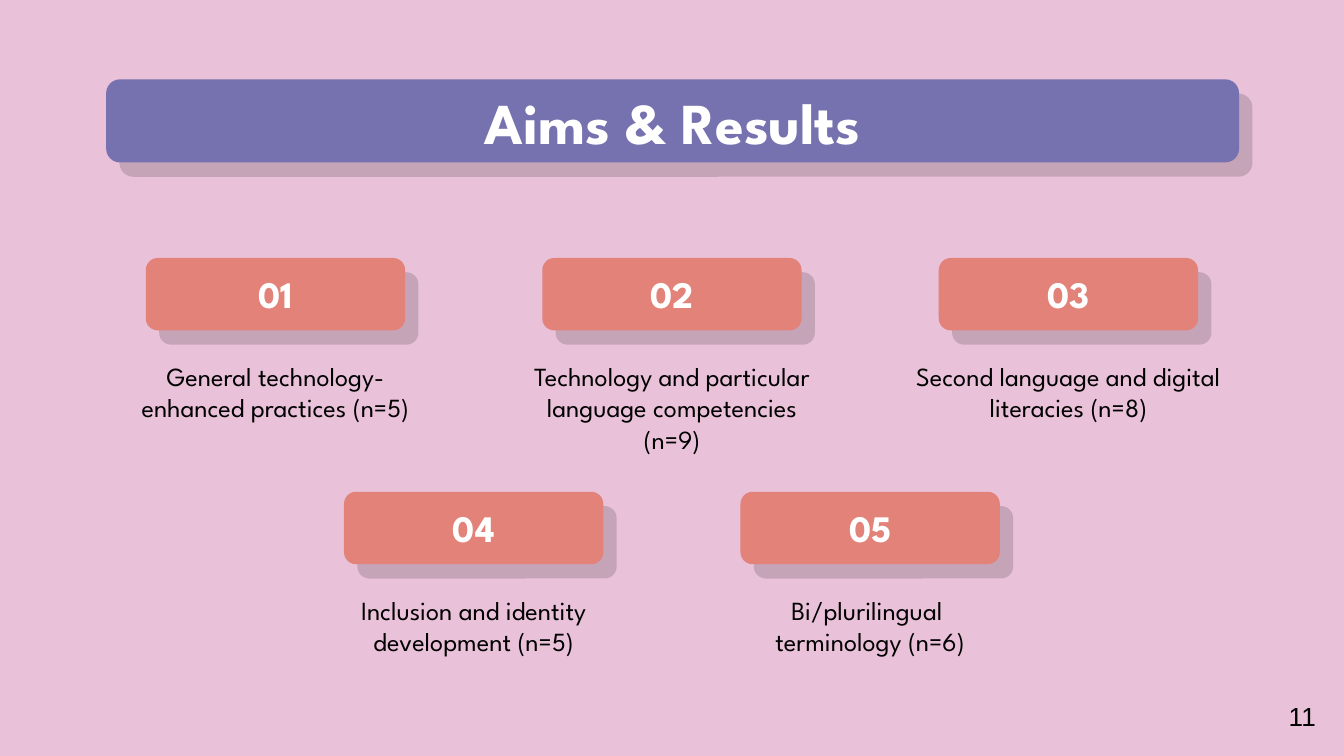
from lxml.etree import SubElement as Sub
from pptx import Presentation
from pptx.dml.color import RGBColor
from pptx.enum.shapes import MSO_SHAPE as Shape
from pptx.enum.text import MSO_ANCHOR as Anchor, PP_ALIGN as Align
from pptx.oxml.ns import qn
from pptx.util import Inches, Pt

PINK = RGBColor(0xE9, 0xC1, 0xD9)
PURPLE = RGBColor(0x76, 0x71, 0xAF)
CORAL = RGBColor(0xE2, 0x82, 0x79)
WHITE = RGBColor(0xFF, 0xFF, 0xFF)
BLACK = RGBColor(0, 0, 0)
FONT = "League Spartan"

WIDE = Inches(10)
HIGH = WIDE * 9 // 16
X, Y = WIDE / 100, HIGH / 100   # one percent of the slide
LEFT, TOP = 7.9 * X, 34.13 * Y  # first cell of the grid
COL, ROW = 29.5 * X, 30.93 * Y  # grid steps
CELL = 25.2 * X                 # text width in a cell
CARD = 19.3 * X

# Each row: its shift in columns, then the aims from left to right
AIMS = [
    (0, ["General technology-enhanced practices (n=5)",
         "Technology and particular language competencies (n=9)",
         "Second language and digital literacies (n=8)"]),
    (0.5, ["Inclusion and identity development (n=5)",
           "Bi/plurilingual \nterminology (n=6)"]),
]


def write(shape, text, size, color, bold=False, font=FONT,
          align=Align.CENTER, anchor=Anchor.TOP):
    frame = shape.text_frame
    frame.text = text
    frame.word_wrap = True
    frame.vertical_anchor = anchor
    frame.margin_left = frame.margin_right = Inches(0.1)
    frame.margin_top = frame.margin_bottom = Inches(0.1)
    for para in frame.paragraphs:
        para.alignment = align
        for run in para.runs:
            run.font.name, run.font.size = font, Pt(size)
            run.font.bold, run.font.color.rgb = bold, color


def add_text(slide, box, *args, **style):
    write(slide.shapes.add_textbox(*map(int, box)), *args, **style)


def add_bar(slide, box, color):
    """Add a rounded bar with a hard, pale shadow to its lower right."""
    bar = slide.shapes.add_shape(Shape.ROUNDED_RECTANGLE, *map(int, box))
    bar.fill.solid()
    bar.fill.fore_color.rgb = color
    bar.line.fill.background()
    bar.shadow.inherit = False
    effects = bar.element.spPr.find(qn("a:effectLst"))
    shade = Sub(effects, qn("a:outerShdw"), blurRad="0", dist=str(Pt(10.5)),
                dir=str(47 * 60000), algn="bl", rotWithShape="0")
    tint = Sub(shade, qn("a:srgbClr"), val=str(BLACK))
    Sub(tint, qn("a:alpha"), val="14000")


def add_title(slide, box, text):
    add_bar(slide, box, PURPLE)
    title = slide.shapes.title
    title.left, title.top, title.width, title.height = map(int, box)
    write(title, text, 31, WHITE, bold=True, anchor=Anchor.MIDDLE)
    title.element.getparent().append(title.element)  # in front of the bar


def add_aim(slide, box, num, text):
    x, y, w, h = box
    bar = 0.31 * h
    add_bar(slide, (x + (w - CARD) / 2, y, CARD, bar), CORAL)
    add_text(slide, (x, y, w, bar), f"{num:02}", 20, WHITE, bold=True)
    add_text(slide, (x, y + 0.38 * h, w, 0.36 * h), text, 14, BLACK)


def add_grid(slide, rows):
    num = 0
    for row, (shift, aims) in enumerate(rows):
        for col, text in enumerate(aims):
            num += 1
            box = LEFT + (col + shift) * COL, TOP + row * ROW, CELL, ROW
            add_aim(slide, box, num, text)


def main():
    deck = Presentation()
    deck.slide_width, deck.slide_height = WIDE, HIGH
    slide = deck.slides.add_slide(deck.slide_layouts[5])
    back = slide.background.fill
    back.solid()
    back.fore_color.rgb = PINK
    add_grid(slide, AIMS)
    add_title(slide, (LEFT, 10.5 * Y, 84.3 * X, 11 * Y), "Aims & Results")
    add_text(slide, (94.9 * X, 90.85 * Y, 4.3 * X, 7.8 * Y),
             "11", 14, BLACK, font="Arial", align=Align.LEFT)
    deck.save("out.pptx")


if __name__ == "__main__":
    main()
